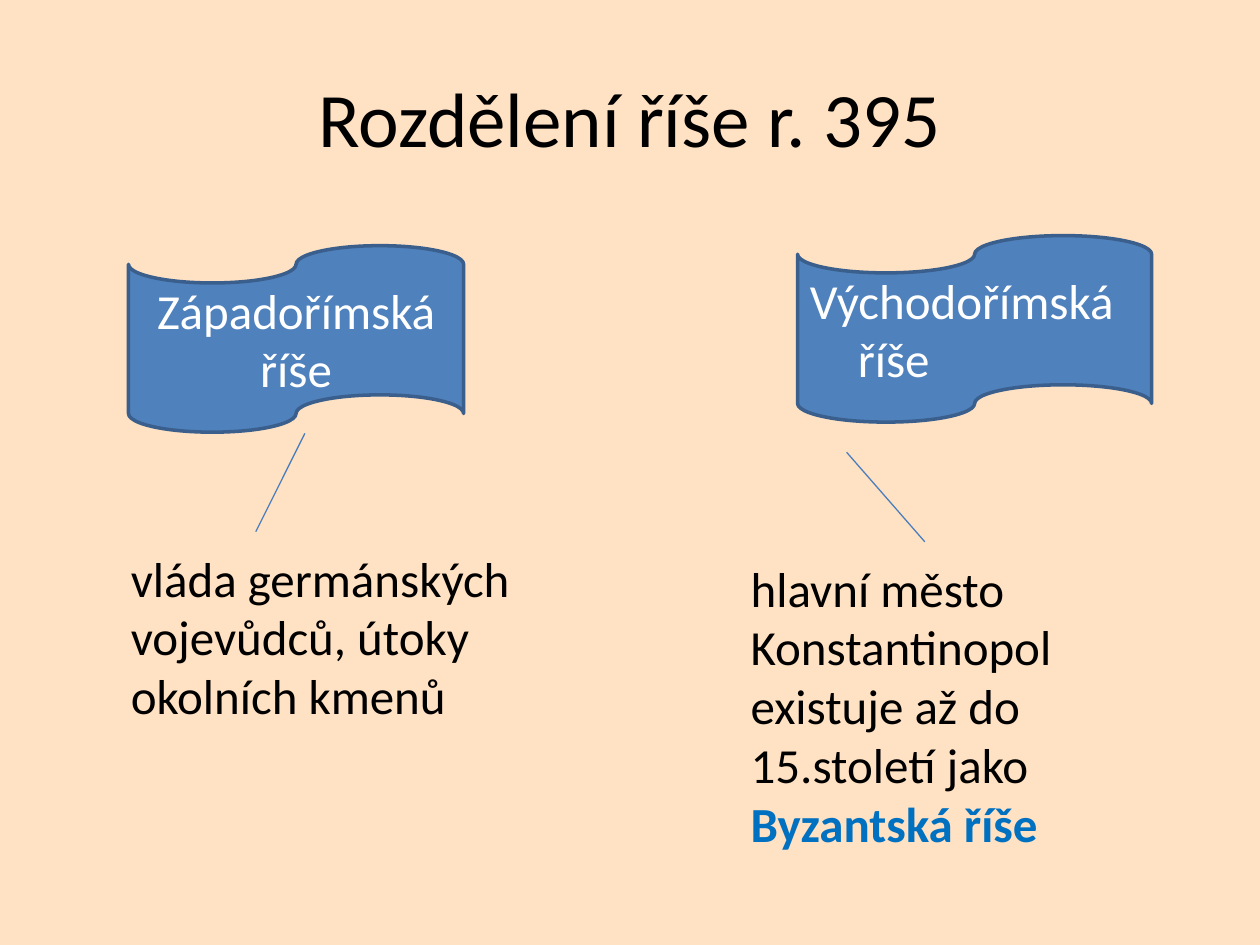
"""Build the slide on the division of the Roman Empire in 395."""
from lxml import etree
from pptx import Presentation
from pptx.dml.color import RGBColor
from pptx.enum.shapes import MSO_CONNECTOR, MSO_SHAPE
from pptx.enum.text import MSO_ANCHOR, PP_ALIGN
from pptx.oxml.ns import qn
from pptx.util import Inches, Pt

TAPE = MSO_SHAPE.FLOWCHART_PUNCHED_TAPE
STRAIGHT = MSO_CONNECTOR.STRAIGHT
MIDDLE, TOP = MSO_ANCHOR.MIDDLE, MSO_ANCHOR.TOP
CENTER, LEFT = PP_ALIGN.CENTER, PP_ALIGN.LEFT

THEME = {
    "font": "Calibri", "head": 44, "text": 28,
    "back": "FFE1C3", "ink": "000000", "light": "FFFFFF", "key": "0070C0",
    "fill": "4F81BD", "edge": "3A5F8C", "link": "4B7EBC",
}
TITLE = "Rozdělení říše r. 395"
HALVES = [
    {
        "name": "Západořímská říše", "tape": (1.02, 1.95, 2.66, 1.48),
        "align": CENTER, "hang": 0,
        "link": (2.42, 3.44, 2.03, 4.22),
        "note": (0.94, 4.3, 3.36, 1.51),
        "lines": [[("vláda germánských vojevůdců, útoky okolních kmenů", False)]],
    },
    {
        "name": "Východořímská říše", "tape": (6.33, 1.87, 2.81, 1.48),
        "align": LEFT, "hang": 0.38,
        "link": (6.72, 3.59, 7.34, 4.3),
        "note": (5.86, 4.38, 3.83, 2.46),
        "lines": [
            [("hlavní město Konstantinopol", False)],
            [("existuje až do 15.století jako ", False), ("Byzantská říše", True)],
        ],
    },
]


def color(key):
    return RGBColor.from_string(THEME[key])


def inches(box):
    return [Inches(v) for v in box]


def write(shape, lines, size="text", ink="ink", align=LEFT, anchor=TOP, hang=0):
    frame = shape.text_frame
    frame.word_wrap = True
    frame.vertical_anchor = anchor
    for i, line in enumerate(lines):
        para = frame.add_paragraph() if i else frame.paragraphs[0]
        para.alignment = align
        if hang:
            props = para._p.get_or_add_pPr()
            props.set("marL", str(Inches(hang)))
            props.set("indent", str(-Inches(hang)))
        for text, strong in line:
            run = para.add_run()
            run.text = text
            font = run.font
            font.name, font.size = THEME["font"], Pt(THEME[size])
            font.bold = strong
            font.color.rgb = color("key" if strong else ink)


def add_tape(slide, half):
    tape = slide.shapes.add_shape(TAPE, *inches(half["tape"]))
    tape.shadow.inherit = False
    tape.fill.solid()
    tape.fill.fore_color.rgb = color("fill")
    tape.line.color.rgb = color("edge")
    tape.line.width = Pt(2)
    write(tape, [[(half["name"], False)]], ink="light", align=half["align"],
          anchor=MIDDLE, hang=half["hang"])


def add_link(slide, ends):
    link = slide.shapes.add_connector(STRAIGHT, *inches(ends))
    link.line.color.rgb = color("link")
    link.line.width = Pt(0.75)
    etree.SubElement(link._element.spPr, qn("a:effectLst"))


def main():
    deck = Presentation()
    deck.slide_width, deck.slide_height = Inches(10), Inches(7.5)
    slide = deck.slides.add_slide(deck.slide_layouts[5])
    slide.background.fill.solid()
    slide.background.fill.fore_color.rgb = color("back")

    title = slide.shapes.title
    title.left, title.top, title.width, title.height = inches((0.5, 0.3, 9, 1.25))
    write(title, [[(TITLE, False)]], size="head", align=CENTER, anchor=MIDDLE)

    for half in HALVES:
        add_tape(slide, half)
        add_link(slide, half["link"])
        note = slide.shapes.add_textbox(*inches(half["note"]))
        write(note, half["lines"])
    deck.save("out.pptx")


if __name__ == "__main__":
    main()
